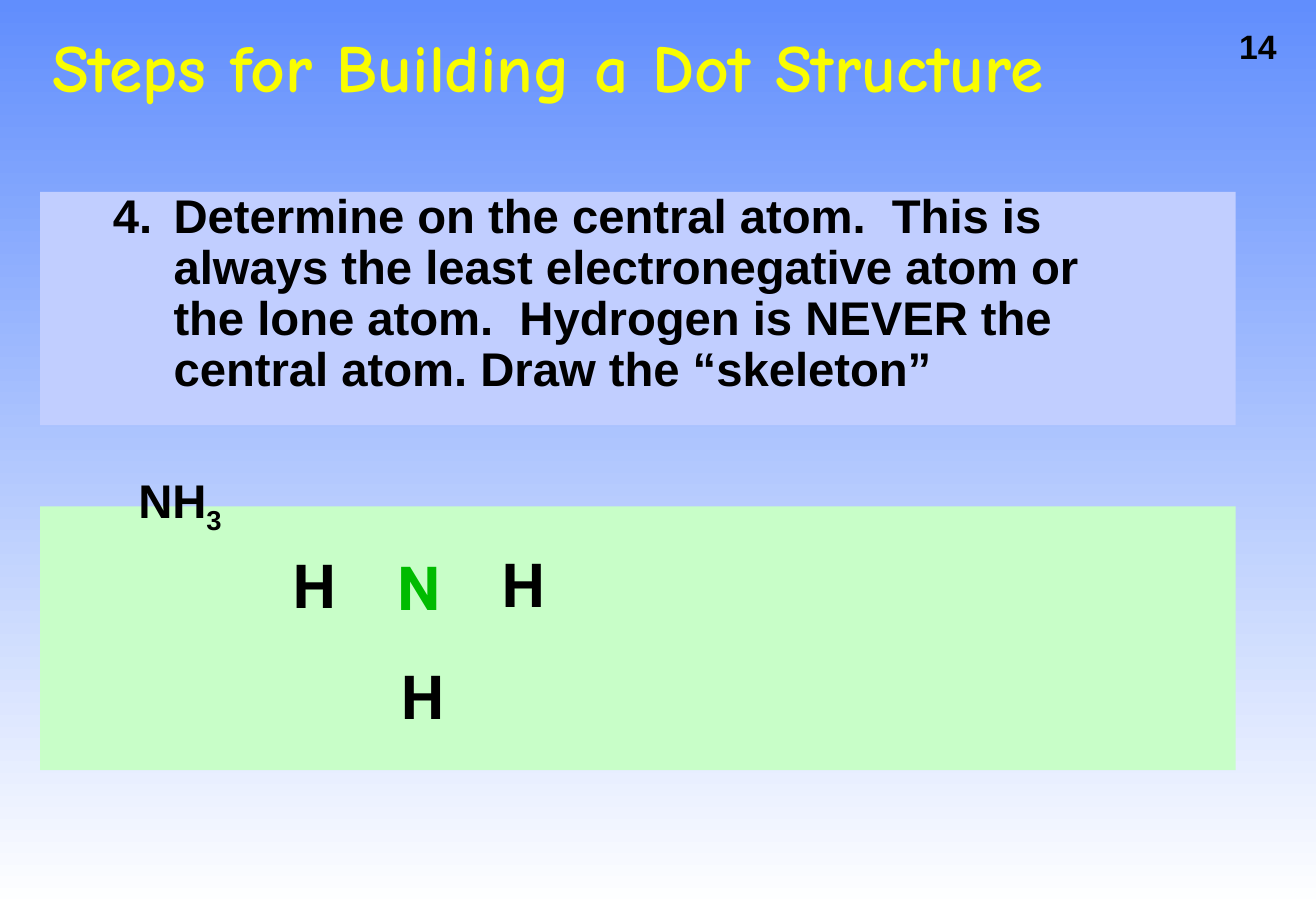
from lxml import etree
from pptx import Presentation
from pptx.dml.color import RGBColor
from pptx.enum.shapes import MSO_SHAPE
from pptx.enum.text import MSO_ANCHOR
from pptx.oxml.ns import qn
from pptx.util import Inches, Pt

RECTANGLE = MSO_SHAPE.RECTANGLE
MIDDLE, TOP = MSO_ANCHOR.MIDDLE, MSO_ANCHOR.TOP

COLORS = {
    "sky": "618EFD",
    "white": "FFFFFF",
    "step": "C1CEFF",
    "diagram": "C8FEC8",
    "title": "FAFD00",
    "text": "000000",
    "central": "00BB00",
}


class DotStructureSlide:
    """Holds the style and the slide, with a method for each kind of element."""

    def __init__(self, slide):
        self.slide = slide

    def color(self, name):
        return RGBColor.from_string(COLORS[name])

    def background(self, top, bottom):
        fill = self.slide.background.fill
        fill.gradient()
        fill.gradient_angle = 270
        for stop, name, position in zip(fill.gradient_stops, (top, bottom), (0, 1)):
            stop.color.rgb = self.color(name)
            stop.position = position

    def panel(self, top, height, fill):
        panel = self.slide.shapes.add_shape(
            RECTANGLE, Inches(0.33), Inches(top), Inches(9.84), Inches(height))
        panel.shadow.inherit = False
        panel.fill.solid()
        panel.fill.fore_color.rgb = self.color(fill)
        panel.line.fill.background()

    def text(self, place, lines, size, font="Arial", color="text", wrap=True,
             inset=(0.1, 0.05), anchor=TOP, spacing=None):
        box = self.slide.shapes.add_textbox(*(Inches(length) for length in place))
        frame = box.text_frame
        frame.word_wrap = wrap
        frame.vertical_anchor = anchor
        frame.margin_left = frame.margin_right = Inches(inset[0])
        frame.margin_top = frame.margin_bottom = Inches(inset[1])
        frame.text = "\n".join(lines)
        for paragraph in frame.paragraphs:
            paragraph.line_spacing = spacing
            for run in paragraph.runs:
                self.style(run, size, font, color)
        return frame.paragraphs

    def style(self, run, size, font="Arial", color="text"):
        run.font.size = Pt(size)
        run.font.name = font
        run.font.bold = True
        run.font.color.rgb = self.color(color)

    def text_shadow(self, run):
        effects = etree.Element(qn("a:effectLst"))
        shadow = etree.SubElement(effects, qn("a:outerShdw"), dist="35921",
                                  dir="2700000", algn="ctr", rotWithShape="0")
        etree.SubElement(shadow, qn("a:srgbClr"), val=COLORS["text"])
        run.font._element.find(qn("a:solidFill")).addnext(effects)

    def number(self, paragraph, start):
        properties = paragraph._p.get_or_add_pPr()
        properties.set("marL", str(Inches(0.5)))
        properties.set("indent", str(-Inches(0.5)))
        etree.SubElement(properties, qn("a:buFont"), typeface="Arial")
        etree.SubElement(properties, qn("a:buAutoNum"),
                         type="arabicPeriod", startAt=str(start))

    def formula(self, paragraph, subscript):
        paragraph.space_before = Pt(44.5)
        paragraph._p.get_or_add_pPr().set("marL", str(Inches(0.21)))
        count = paragraph.add_run()
        count.text = subscript
        self.style(count, 28)
        count.font._element.set("baseline", "-25000")

    def atom(self, left, top, symbol, color="text"):
        self.text((left, top, 0.62, 0.5), [symbol], 36, "Roboto", color,
                  wrap=False, inset=(0, 0))


def main():
    deck = Presentation()
    deck.slide_width, deck.slide_height = Inches(10.83), Inches(7.5)
    page = DotStructureSlide(deck.slides.add_slide(deck.slide_layouts[6]))

    page.background("sky", "white")
    page.text((10.1, 0.16, 0.54, 0.43), ["14"], 20, wrap=False)
    page.panel(4.17, 2.17, "diagram")
    page.panel(1.58, 1.92, "step")

    title = page.text((0.33, 0.17, 9.92, 0.83), ["Steps for Building a Dot Structure"],
                      40, "Comic Neue", "title", anchor=MIDDLE, spacing=0.9)
    page.text_shadow(title[0].runs[0])

    step, ammonia = page.text((0.83, 1.54, 8.83, 5.96), [
        "Determine on the central atom.  This is always the least electronegative "
        "atom or the lone atom.  Hydrogen is NEVER the central atom. "
        "Draw the “skeleton”",
        "NH",
    ], 28, spacing=0.9)
    page.number(step, 4)
    page.formula(ammonia, "3")

    for left, top in ((2.41, 4.51), (4.13, 4.5), (3.3, 5.42)):
        page.atom(left, top, "H")
    page.atom(3.27, 4.53, "N", "central")

    deck.save("out.pptx")


if __name__ == "__main__":
    main()
